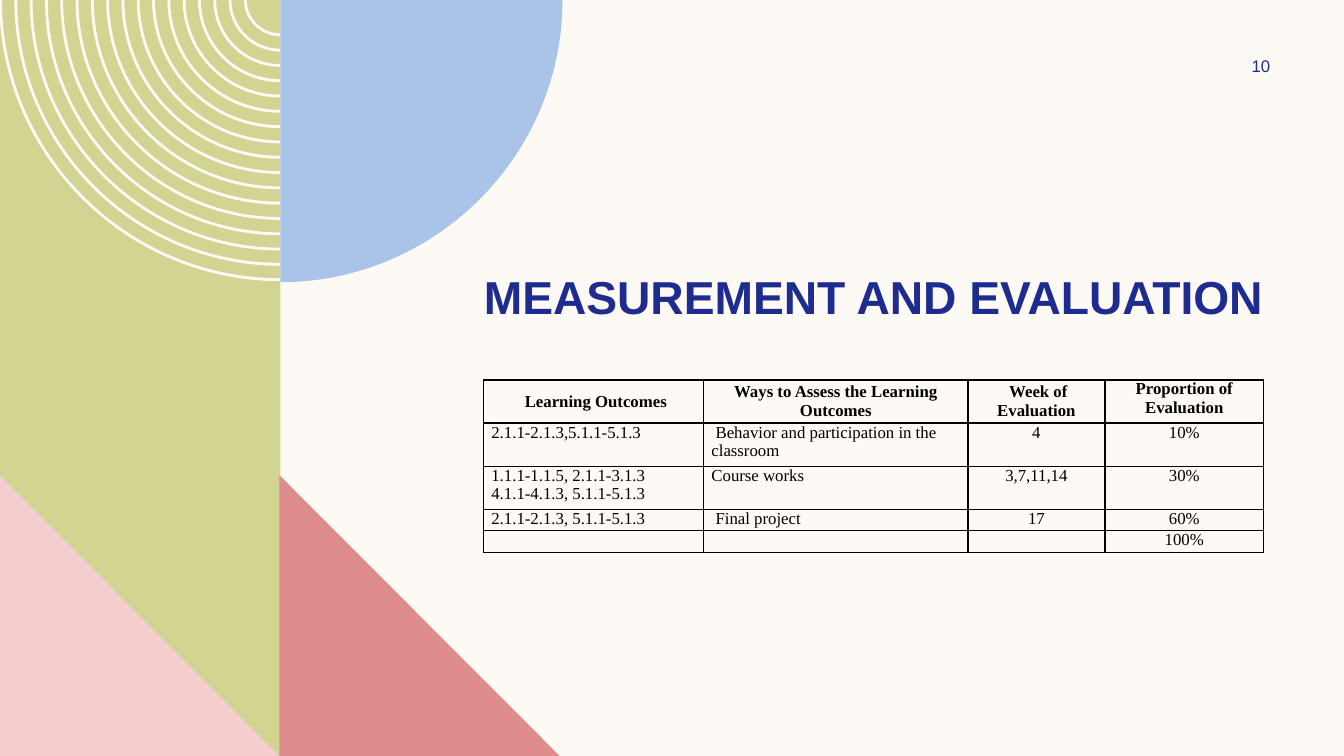
from pptx import Presentation
from pptx.dml.color import RGBColor
from pptx.enum import shapes, text
from pptx.oxml import parse_xml
from pptx.oxml.ns import nsdecls, qn
from pptx.util import Pt

# Content
TITLE = "MEASUREMENT AND EVALUATION"
PAGE = "10"
ROWS = [
    (" Learning Outcomes", "Ways to Assess the Learning Outcomes",
     " Week of Evaluation", "Proportion of Evaluation"),
    ("2.1.1-2.1.3,5.1.1-5.1.3",
     " Behavior and participation in the classroom", "4", "10%"),
    ("1.1.1-1.1.5, 2.1.1-3.1.3\n4.1.1-4.1.3, 5.1.1-5.1.3",
     "Course works", "3,7,11,14", "30%"),
    ("2.1.1-2.1.3, 5.1.1-5.1.3", " Final project", "17", "60%"),
    ("", "", "", "100%"),
]
WIDTHS = (157.2, 188.6, 97.9, 113.4)
HEIGHTS = (30.8, 30.8, 30.8, 15.4, 15.4)

CREAM = RGBColor(0xFD, 0xFA, 0xF6)
GREEN = RGBColor(0xD2, 0xD5, 0x92)
BLUE = RGBColor(0xAA, 0xC3, 0xE8)
RED = RGBColor(0xDE, 0x8C, 0x8C)
PINK = RGBColor(0xF5, 0xCD, 0xCE)
NAVY = RGBColor(0x1F, 0x2C, 0x8F)
BLACK = RGBColor(0, 0, 0)

# Geometry
EDGE = 200.2            # right side of the green panel
RINGS, OUTER, STEP, BAND = 17, 200.8, 10.93, 2
BEND = 0.55             # handle length of a quarter circle
MID, LEFT, CENTER = text.MSO_ANCHOR.MIDDLE, text.PP_ALIGN.LEFT, text.PP_ALIGN.CENTER

deck = Presentation()
deck.slide_width, deck.slide_height = Pt(960), Pt(540)
slide = deck.slides.add_slide(deck.slide_layouts[6])
slide.background.fill.solid()
slide.background.fill.fore_color.rgb = CREAM


def paint(shape, color):
    shape.shadow.inherit = False
    shape.fill.solid()
    shape.fill.fore_color.rgb = color
    shape.line.fill.background()


def block(kind, x, y, w, h, color):
    paint(slide.shapes.add_shape(kind, Pt(x), Pt(y), Pt(w), Pt(h)), color)


def arc(radius, side):
    """Start, two handles and end of a quarter circle, from the top edge down."""
    turns = ((1, 0), (1, BEND), (BEND, 1), (0, 1))
    return [(Pt(EDGE + side * radius * x), Pt(radius * y)) for x, y in turns]


def outline(loops, color):
    """Each loop holds arcs of four points, joined by straight lines."""
    pen = slide.shapes.build_freeform(*loops[0][0], scale=1.0)
    for i, loop in enumerate(loops):
        if i:
            pen.move_to(*loop[0])
        pen.add_line_segments(loop[1:], close=True)
    shape = pen.convert_to_shape()
    paint(shape, color)
    # Turn the three lines of every arc into one curve
    lines = list(shape._element.iter(qn("a:lnTo")))
    for loop in loops:
        sides, lines = lines[:len(loop) - 1], lines[len(loop) - 1:]
        for j in range(0, len(sides), 4):
            curve = parse_xml(f'<a:cubicBezTo {nsdecls("a")}/>')
            sides[j].addprevious(curve)
            for side in sides[j:j + 3]:
                curve.append(side[0])
                side.getparent().remove(side)


def style(para, name, size, color, bold=False, align=LEFT):
    para.alignment = align
    font = para.font
    font.name, font.size, font.bold = name, Pt(size), bold
    font.color.rgb = color


def label(words, x, y, w, h, size, bold=False, align=LEFT, anchor=text.MSO_ANCHOR.TOP):
    frame = slide.shapes.add_textbox(Pt(x), Pt(y), Pt(w), Pt(h)).text_frame
    frame.word_wrap = True
    frame.vertical_anchor = anchor
    frame.margin_left = frame.margin_right = frame.margin_top = frame.margin_bottom = 0
    frame.text = words
    style(frame.paragraphs[0], "Arial", size, NAVY, bold, align)


def border(cell):
    props = cell._tc.get_or_add_tcPr()
    for i, side in enumerate(("lnL", "lnR", "lnT", "lnB")):
        props.insert(i, parse_xml(
            f'<a:{side} {nsdecls("a")} w="12700"><a:solidFill>'
            f'<a:srgbClr val="{BLACK}"/></a:solidFill></a:{side}>'))


# Decoration
block(shapes.MSO_SHAPE.RECTANGLE, 0, 0, EDGE, 540, GREEN)
radii = [OUTER - i * STEP for i in range(RINGS)]
outline([arc(r, -1) + arc(r - BAND, -1)[::-1] for r in radii], CREAM)
outline([arc(201.6, 1) + [(Pt(EDGE), 0)]], BLUE)
for x, color in ((199.5, RED), (-0.7, PINK)):
    block(shapes.MSO_SHAPE.RIGHT_TRIANGLE, x, 339.3, 200.9, 201.3, color)

# Title and page number
label(TITLE, 345.6, 192, 577.4, 58, 33, bold=True)
label(PAGE, 861.8, 36, 77.8, 21.6, 12, align=CENTER, anchor=MID)

# Table
grid = slide.shapes.add_table(len(ROWS), len(WIDTHS), Pt(345.6), Pt(271.4),
                              Pt(sum(WIDTHS)), Pt(sum(HEIGHTS))).table
grid.first_row = grid.horz_banding = False
for column, width in zip(grid.columns, WIDTHS):
    column.width = Pt(width)
for r, (row, height) in enumerate(zip(ROWS, HEIGHTS)):
    grid.rows[r].height = Pt(height)
    for c, words in enumerate(row):
        cell = grid.cell(r, c)
        cell.margin_left = cell.margin_right = Pt(5.4)
        cell.margin_top = cell.margin_bottom = 0
        cell.fill.background()
        border(cell)
        cell.text = words
        if r == 0 and c < 3:
            cell.vertical_anchor = MID
        for para in cell.text_frame.paragraphs:
            style(para, "Times New Roman", 12, BLACK, bold=r == 0,
                  align=CENTER if r == 0 or c > 1 else LEFT)
            if not words:   # keeps an empty row low
                para._p.append(parse_xml(f'<a:endParaRPr {nsdecls("a")} sz="1200"/>'))

deck.save("out.pptx")
